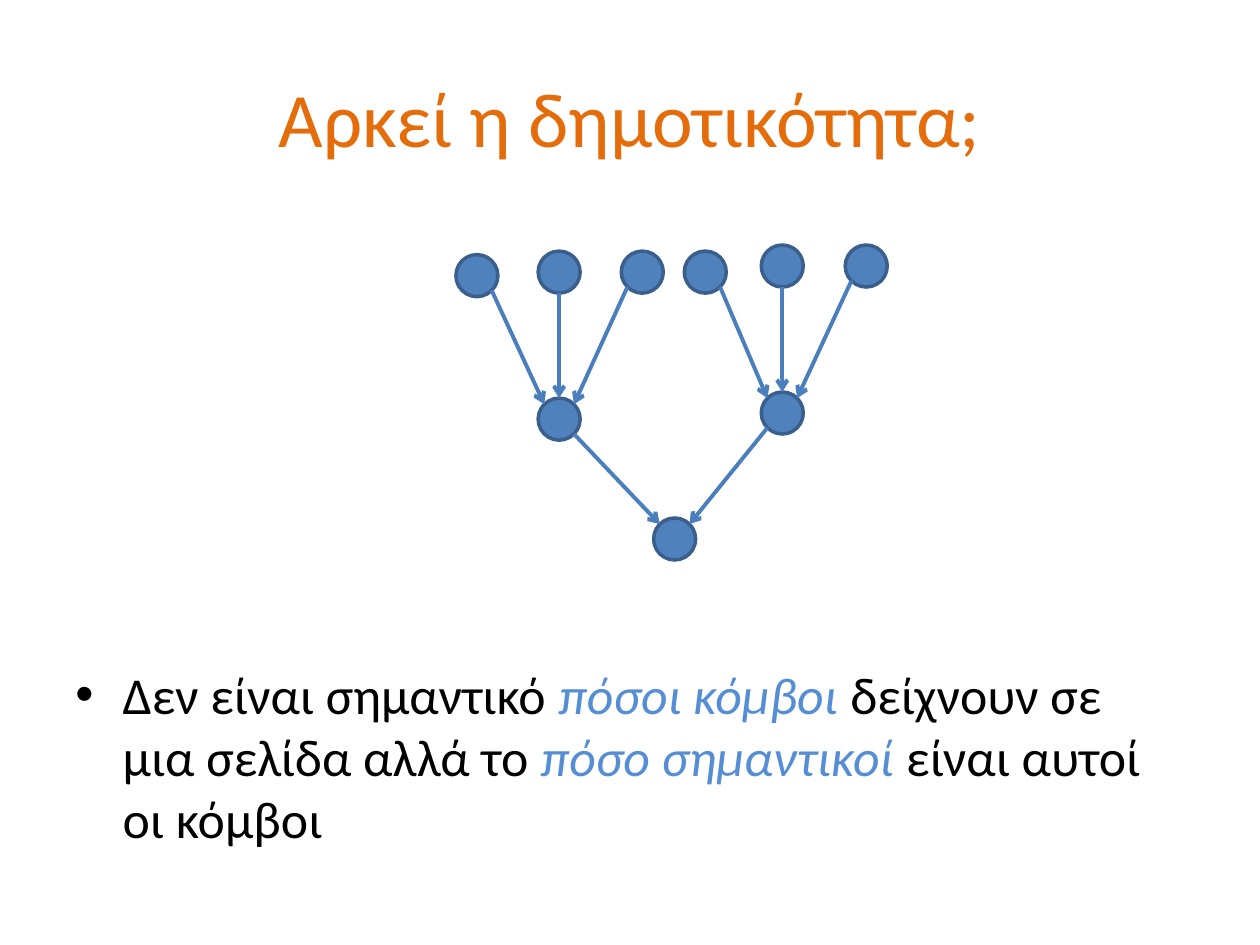
from math import sqrt

from lxml.etree import SubElement
from pptx import Presentation
from pptx.dml.color import RGBColor
from pptx.enum.shapes import MSO_CONNECTOR, MSO_SHAPE
from pptx.enum.text import MSO_ANCHOR, PP_ALIGN
from pptx.oxml.ns import qn
from pptx.util import Pt

COLORS = {
    "title": "E46C0A",
    "text": "000000",
    "emphasis": "558ED5",
    "node": "4F81BD",
    "node_line": "3A5F8C",
    "arrow": "4B7EBC",
}


def color(name):
    return RGBColor.from_string(COLORS[name])


class GraphSlide:
    font = "Calibri"
    radius = 12

    def __init__(self, page):
        self.page = page

    def text(self, left, top, width, height, spans, size, anchor=MSO_ANCHOR.TOP):
        """Add one paragraph built from (text, colour name, italic) spans."""
        box = self.page.shapes.add_textbox(Pt(left), Pt(top), Pt(width), Pt(height))
        frame = box.text_frame
        frame.word_wrap = True
        frame.vertical_anchor = anchor
        para = frame.paragraphs[0]
        for words, color_name, italic in spans:
            span = para.add_run()
            span.text = words
            span.font.name = self.font
            span.font.size = Pt(size)
            span.font.italic = italic
            span.font.color.rgb = color(color_name)
        return para

    def bullet(self, para, indent):
        properties = para._p.get_or_add_pPr()
        properties.set("marL", str(Pt(indent)))
        properties.set("indent", str(-Pt(indent)))
        SubElement(properties, qn("a:buFont"), typeface="Arial")
        SubElement(properties, qn("a:buChar"), char="•")

    def node(self, center):
        x, y = center
        size = Pt(2 * self.radius)
        circle = self.page.shapes.add_shape(
            MSO_SHAPE.OVAL, Pt(x - self.radius), Pt(y - self.radius), size, size)
        circle.shadow.inherit = False
        circle.fill.solid()
        circle.fill.fore_color.rgb = color("node")
        circle.line.color.rgb = color("node_line")
        circle.line.width = Pt(2)

    def arrow(self, source, target):
        """Point down from one node's rim to another's, vertically or between diagonals."""
        (x1, y1), (x2, y2) = source, target
        side = (x2 > x1) - (x2 < x1)
        drop = self.radius * sqrt(0.5) if side else self.radius
        shift = side * drop
        line = self.page.shapes.add_connector(
            MSO_CONNECTOR.STRAIGHT,
            Pt(x1 + shift), Pt(y1 + drop), Pt(x2 - shift), Pt(y2 - drop))
        line.line.color.rgb = color("arrow")
        line.line.width = Pt(2.25)
        SubElement(line.line._get_or_add_ln(), qn("a:tailEnd"), type="arrow")
        SubElement(line._element.spPr, qn("a:effectLst"))


def main():
    deck = Presentation()
    deck.slide_width, deck.slide_height = Pt(720), Pt(540)
    slide = GraphSlide(deck.slides.add_slide(deck.slide_layouts[6]))

    title = slide.text(36, 21.6, 648, 90, [("Αρκεί η δημοτικότητα;", "title", False)],
                       44, MSO_ANCHOR.MIDDLE)
    title.alignment = PP_ALIGN.CENTER

    message = slide.text(36, 375, 648, 107, [
        ("Δεν είναι σημαντικό ", "text", False),
        ("πόσοι κόμβοι ", "emphasis", True),
        ("δείχνουν σε μια σελίδα αλλά το ", "text", False),
        ("πόσο σημαντικοί ", "emphasis", True),
        ("είναι αυτοί οι κόμβοι", "text", False),
    ], 29.6)
    slide.bullet(message, 27)

    root = (385.5, 308)
    sources_by_hub = {
        (447, 236): [(403, 155.5), (447, 152), (495, 152)],
        (319.5, 239.5): [(272.5, 157.5), (319.5, 155.5), (367, 155.5)],
    }
    slide.node(root)
    for hub, sources in sources_by_hub.items():
        slide.node(hub)
        slide.arrow(hub, root)
        for source in sources:
            slide.node(source)
            slide.arrow(source, hub)

    deck.save("out.pptx")


if __name__ == "__main__":
    main()
